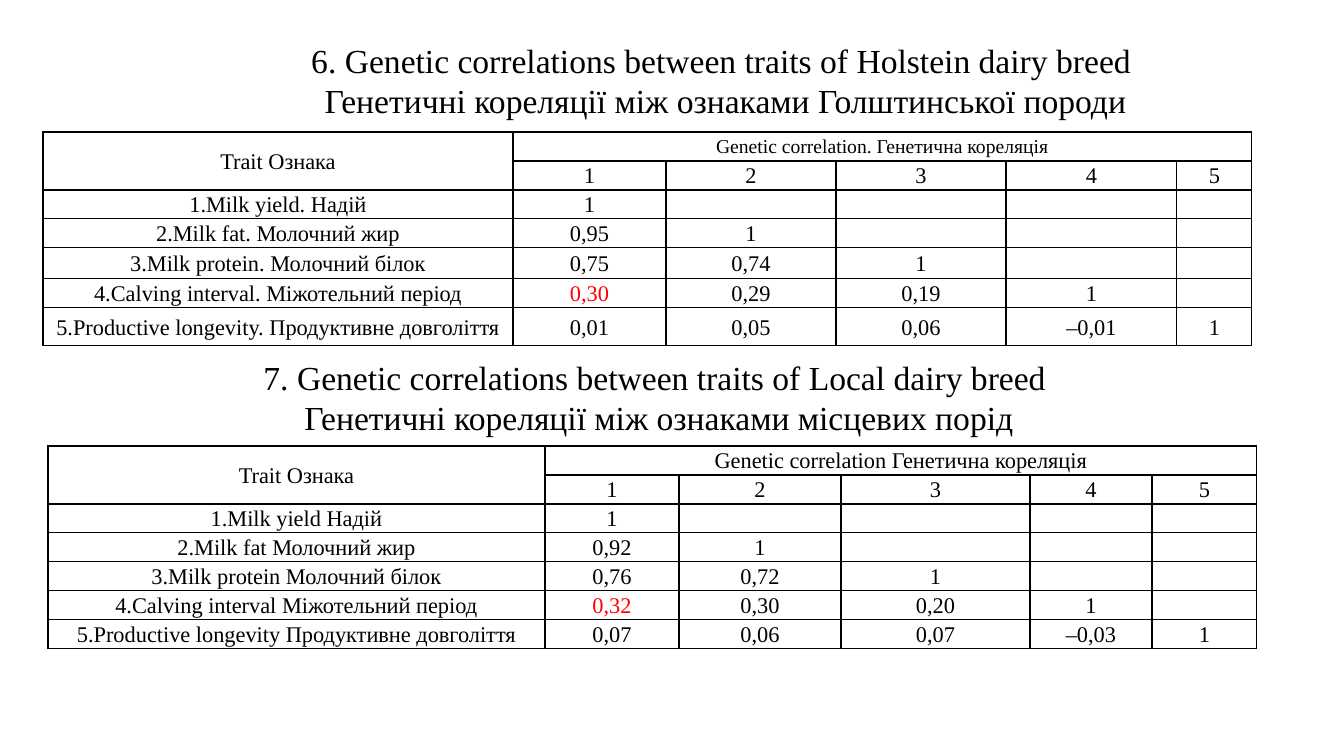
"""Build a slide with two tables of genetic correlations between dairy traits."""
from lxml import etree
from pptx import Presentation
from pptx.dml.color import RGBColor
from pptx.enum.text import MSO_ANCHOR, PP_ALIGN
from pptx.oxml.ns import qn
from pptx.util import Pt

CENTER, MIDDLE = PP_ALIGN.CENTER, MSO_ANCHOR.MIDDLE
FONT, BLACK, RED = "Times New Roman", "000000", "FF0000"
TITLE_PT, CELL_PT = 24, 16
COEFFS = 5

SECTIONS = [
    {
        "title": ["6. Genetic correlations between traits of Holstein dairy breed ",
                  "Генетичні кореляції між ознаками Голштинської породи"],
        "title_box": (244, 35, 963, 92),
        "origin": (43, 132),
        "cols": [470, 153, 170, 170, 171, 75],
        "rows": [29, 29, 29, 29, 31, 29, 38],
        "heading": ("Genetic correlation. Генетична кореляція", 14),
        "traits": [
            ("1.Milk yield. Надій", ["1"]),
            ("2.Milk fat. Молочний жир", ["0,95", "1"]),
            ("3.Milk protein. Молочний білок", ["0,75", "0,74", "1"]),
            ("4.Calving interval. Міжотельний період", ["0,30", "0,29", "0,19", "1"]),
            ("5.Productive longevity. Продуктивне довголіття",
             ["0,01", "0,05", "0,06", "–0,01", "1"]),
        ],
        "red": (5, 1),
    },
    {
        "title": ["7. Genetic correlations between traits of Local dairy breed ",
                  "Генетичні кореляції між ознаками місцевих порід"],
        "title_box": (74, 352, 1170, 92),
        "origin": (48, 446),
        "cols": [497, 134, 162, 189, 122, 105],
        "rows": [29] * 7,
        "heading": ("Genetic correlation Генетична кореляція", 16),
        "traits": [
            ("1.Milk yield Надій", ["1"]),
            ("2.Milk fat Молочний жир", ["0,92", "1"]),
            ("3.Milk protein Молочний білок", ["0,76", "0,72", "1"]),
            ("4.Calving interval Міжотельний період", ["0,32", "0,30", "0,20", "1"]),
            ("5.Productive longevity Продуктивне довголіття",
             ["0,07", "0,06", "0,07", "–0,03", "1"]),
        ],
        "red": (5, 1),
    },
]


def px(n):
    return round(n * 914400 / 100.8)


CELL_FORMAT = {"margin_left": px(7), "margin_right": px(7), "margin_top": 0,
               "margin_bottom": 0, "vertical_anchor": MIDDLE}


def color(value):
    return RGBColor.from_string(value)


def write(p, text, size, value=BLACK):
    p.alignment = CENTER
    if not text:
        etree.SubElement(p._p, qn("a:endParaRPr"), sz=str(size * 100))
        return
    r = p.add_run()
    r.text = text
    for name, setting in {"name": FONT, "size": Pt(size)}.items():
        setattr(r.font, name, setting)
    r.font.color.rgb = color(value)


def add_borders(cell):
    tc_pr = cell._tc.get_or_add_tcPr()
    for side in ("a:lnL", "a:lnR", "a:lnT", "a:lnB"):
        ln = etree.SubElement(tc_pr, qn(side), w=str(Pt(1)))
        fill = etree.SubElement(ln, qn("a:solidFill"))
        etree.SubElement(fill, qn("a:srgbClr"), val=BLACK)


def add_title(s, lines, box):
    tf = s.shapes.add_textbox(*map(px, box)).text_frame
    tf.word_wrap = True
    for i, line in enumerate(lines):
        p = tf.add_paragraph() if i else tf.paragraphs[0]
        write(p, line, TITLE_PT)


def add_correlations(s, section):
    cols, rows = section["cols"], section["rows"]
    heading, heading_pt = section["heading"]
    grid = [["Trait Ознака", heading],
            [""] + [str(n + 1) for n in range(COEFFS)]]
    grid += [[trait] + values for trait, values in section["traits"]]
    box = (*section["origin"], sum(cols), sum(rows))
    table = s.shapes.add_table(len(rows), len(cols), *map(px, box)).table
    table.first_row = table.horz_banding = False
    for column, width in zip(table.columns, cols):
        column.width = px(width)
    for r, height in enumerate(rows):
        table.rows[r].height = px(height)
        for c in range(len(cols)):
            cell = table.cell(r, c)
            for name, setting in CELL_FORMAT.items():
                setattr(cell, name, setting)
            add_borders(cell)
            cell.fill.background()
            text = grid[r][c] if c < len(grid[r]) else ""
            size = heading_pt if (r, c) == (0, 1) else CELL_PT
            p = cell.text_frame.paragraphs[0]
            p.line_spacing = 1.07
            write(p, text, size, RED if (r, c) == section["red"] else BLACK)
    table.cell(0, 0).merge(table.cell(1, 0))
    table.cell(0, 1).merge(table.cell(0, COEFFS))


def main():
    prs = Presentation()
    prs.slide_width, prs.slide_height = px(1344), px(756)
    s = prs.slides.add_slide(prs.slide_layouts[6])
    for section in SECTIONS:
        add_title(s, section["title"], section["title_box"])
        add_correlations(s, section)
    prs.save("out.pptx")


if __name__ == "__main__":
    main()
